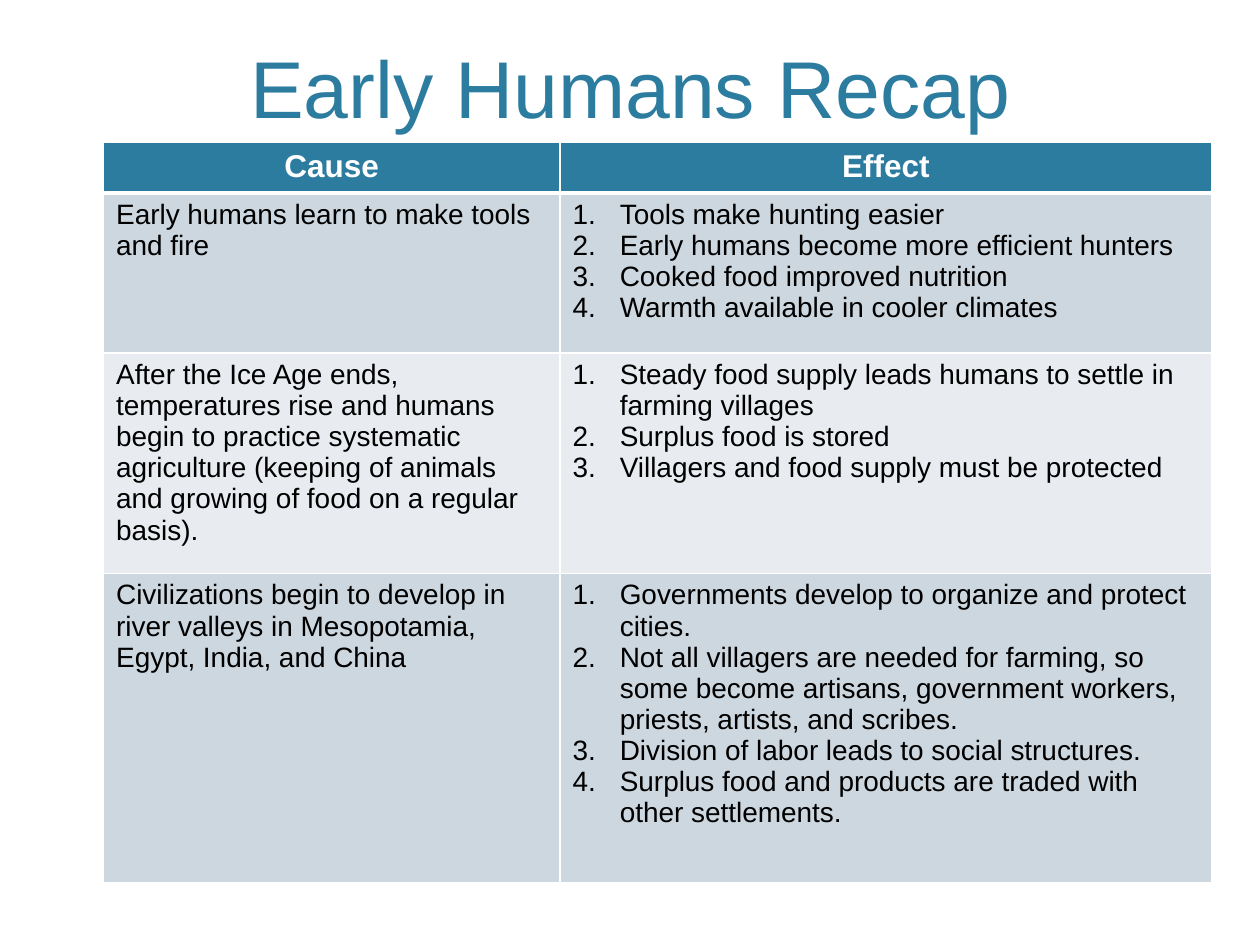
from dataclasses import dataclass

from lxml.etree import SubElement
from pptx import Presentation
from pptx.dml.color import RGBColor
from pptx.enum.text import MSO_ANCHOR, PP_ALIGN
from pptx.oxml.ns import qn
from pptx.util import Pt

TEAL = RGBColor(0x2C, 0x7C, 0x9F)
WHITE = RGBColor(0xFF, 0xFF, 0xFF)
BLACK = RGBColor(0x00, 0x00, 0x00)
BAND_DARK = RGBColor(0xCD, 0xD7, 0xDF)
BAND_LIGHT = RGBColor(0xE8, 0xEC, 0xF0)

FONT = "Arial"
NUMBER_INDENT = Pt(27)
COLUMN_WIDTHS = (260.8, 372.5)
HEADER_HEIGHT = 26.5


@dataclass(frozen=True)
class Recap:
    cause: str
    effects: tuple[str, ...]
    height: float


RECAPS = (
    Recap(
        "Early humans learn to make tools and fire",
        (
            "Tools make hunting easier",
            "Early humans become more efficient hunters",
            "Cooked food improved nutrition",
            "Warmth available in cooler climates",
        ),
        91.4,
    ),
    Recap(
        "After the Ice Age ends, temperatures rise and humans begin to practice "
        "systematic agriculture (keeping of animals and growing of food on a regular basis).",
        (
            "Steady food supply leads humans to settle in farming villages",
            "Surplus food is stored",
            "Villagers and food supply must be protected",
        ),
        126,
    ),
    Recap(
        "Civilizations begin to develop in river valleys in Mesopotamia, Egypt, India, and China",
        (
            "Governments develop to organize and protect cities.",
            "Not all villagers are needed for farming, so some become artisans, "
            "government workers, priests, artists, and scribes.",
            "Division of labor leads to social structures.",
            "Surplus food and products are traded with other settlements.",
        ),
        177,
    ),
)


def write_text(text_frame, *lines: str, size: float, color: RGBColor, bold: bool = False,
               alignment=PP_ALIGN.LEFT, numbered: bool = False) -> None:
    """Write one paragraph per line with a shared format."""
    text_frame.word_wrap = True
    for index, line in enumerate(lines):
        paragraph = text_frame.add_paragraph() if index else text_frame.paragraphs[0]
        paragraph.alignment = alignment
        run = paragraph.add_run()
        run.text = line
        run.font.name = FONT
        run.font.size = Pt(size)
        run.font.bold = bold
        run.font.color.rgb = color
        if numbered:
            properties = paragraph._p.get_or_add_pPr()
            properties.set("marL", str(NUMBER_INDENT))
            properties.set("indent", str(-NUMBER_INDENT))
            SubElement(properties, qn("a:buFont"), typeface="+mj-lt")
            SubElement(properties, qn("a:buAutoNum"), type="arabicPeriod")


def style_cell(cell, fill: RGBColor, top: float = 1, bottom: float = 1) -> None:
    """Give a cell white borders and a solid fill."""
    properties = cell._tc.get_or_add_tcPr()
    for side, width in (("L", 1), ("R", 1), ("T", top), ("B", bottom)):
        line = SubElement(properties, qn(f"a:ln{side}"), w=str(Pt(width)))
        line_fill = SubElement(line, qn("a:solidFill"))
        SubElement(line_fill, qn("a:srgbClr"), val=str(WHITE))
    cell.fill.solid()
    cell.fill.fore_color.rgb = fill


def add_title(slide, text: str) -> None:
    title = slide.shapes.add_textbox(Pt(43.2), Pt(-24.5), Pt(633.6), Pt(105))
    title.text_frame.vertical_anchor = MSO_ANCHOR.BOTTOM
    write_text(title.text_frame, text, size=46, color=TEAL, alignment=PP_ALIGN.CENTER)


def add_recap_table(slide, headings: tuple[str, str], recaps: tuple[Recap, ...]) -> None:
    heights = (HEADER_HEIGHT, *(recap.height for recap in recaps))
    table = slide.shapes.add_table(
        len(heights), len(COLUMN_WIDTHS), Pt(59.2), Pt(81.5),
        Pt(sum(COLUMN_WIDTHS)), Pt(sum(heights)),
    ).table
    for column, width in zip(table.columns, COLUMN_WIDTHS):
        column.width = Pt(width)
    for row, height in zip(table.rows, heights):
        row.height = Pt(height)

    # Header row
    for cell, heading in zip(table.rows[0].cells, headings):
        style_cell(cell, TEAL, bottom=3)
        write_text(cell.text_frame, heading, size=18, color=WHITE, bold=True,
                   alignment=PP_ALIGN.CENTER)

    # Banded body rows
    for index, recap in enumerate(recaps, start=1):
        cause, effect = table.rows[index].cells
        for cell in (cause, effect):
            style_cell(cell, BAND_DARK if index % 2 else BAND_LIGHT, top=3 if index == 1 else 1)
        write_text(cause.text_frame, recap.cause, size=16, color=BLACK)
        write_text(effect.text_frame, *recap.effects, size=16, color=BLACK, numbered=True)


def main() -> None:
    presentation = Presentation()
    presentation.slide_width, presentation.slide_height = Pt(720), Pt(540)
    slide = presentation.slides.add_slide(presentation.slide_layouts[6])
    slide.background.fill.solid()
    slide.background.fill.fore_color.rgb = WHITE
    add_title(slide, "Early Humans Recap")
    add_recap_table(slide, ("Cause", "Effect"), RECAPS)
    presentation.save("out.pptx")


if __name__ == "__main__":
    main()
